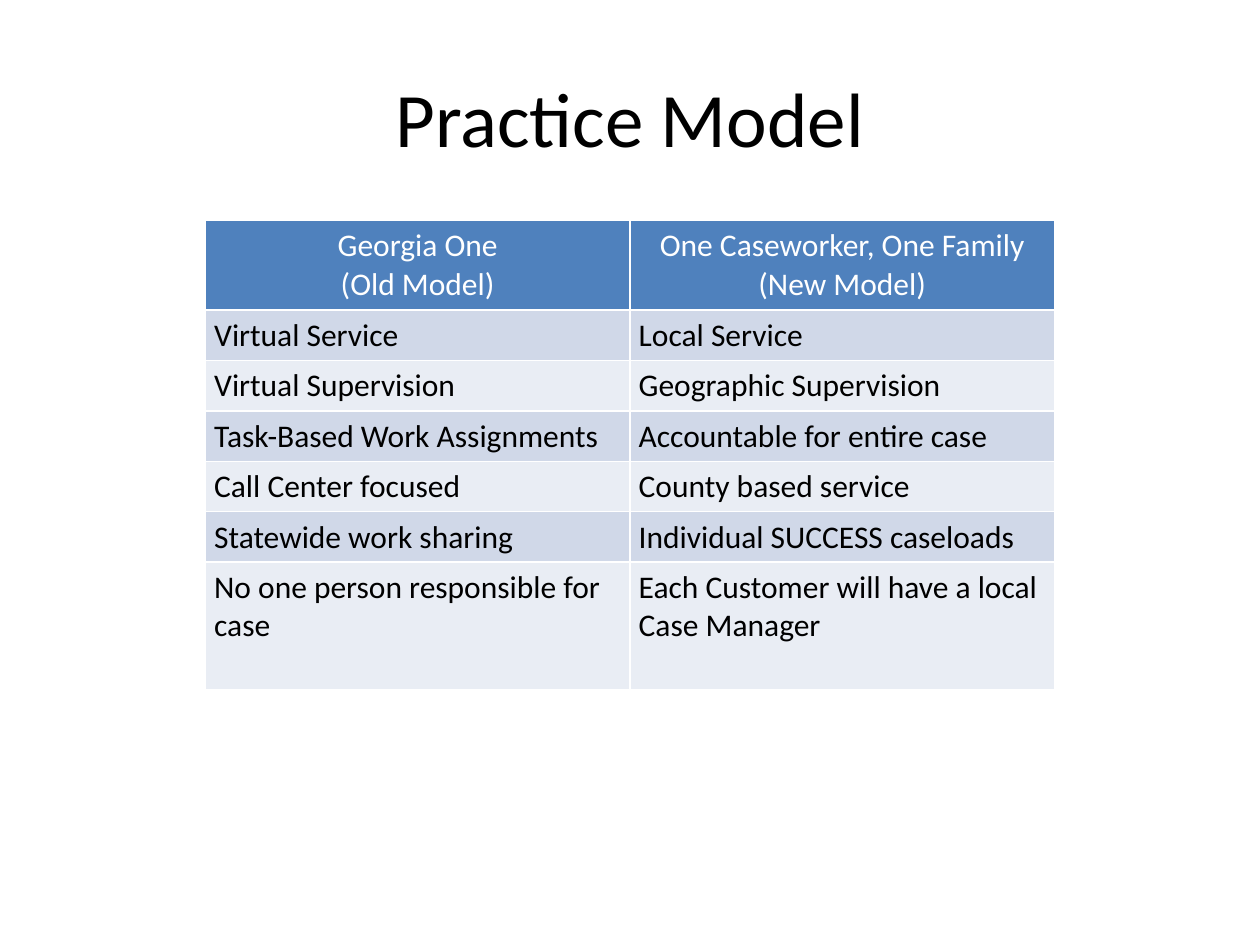
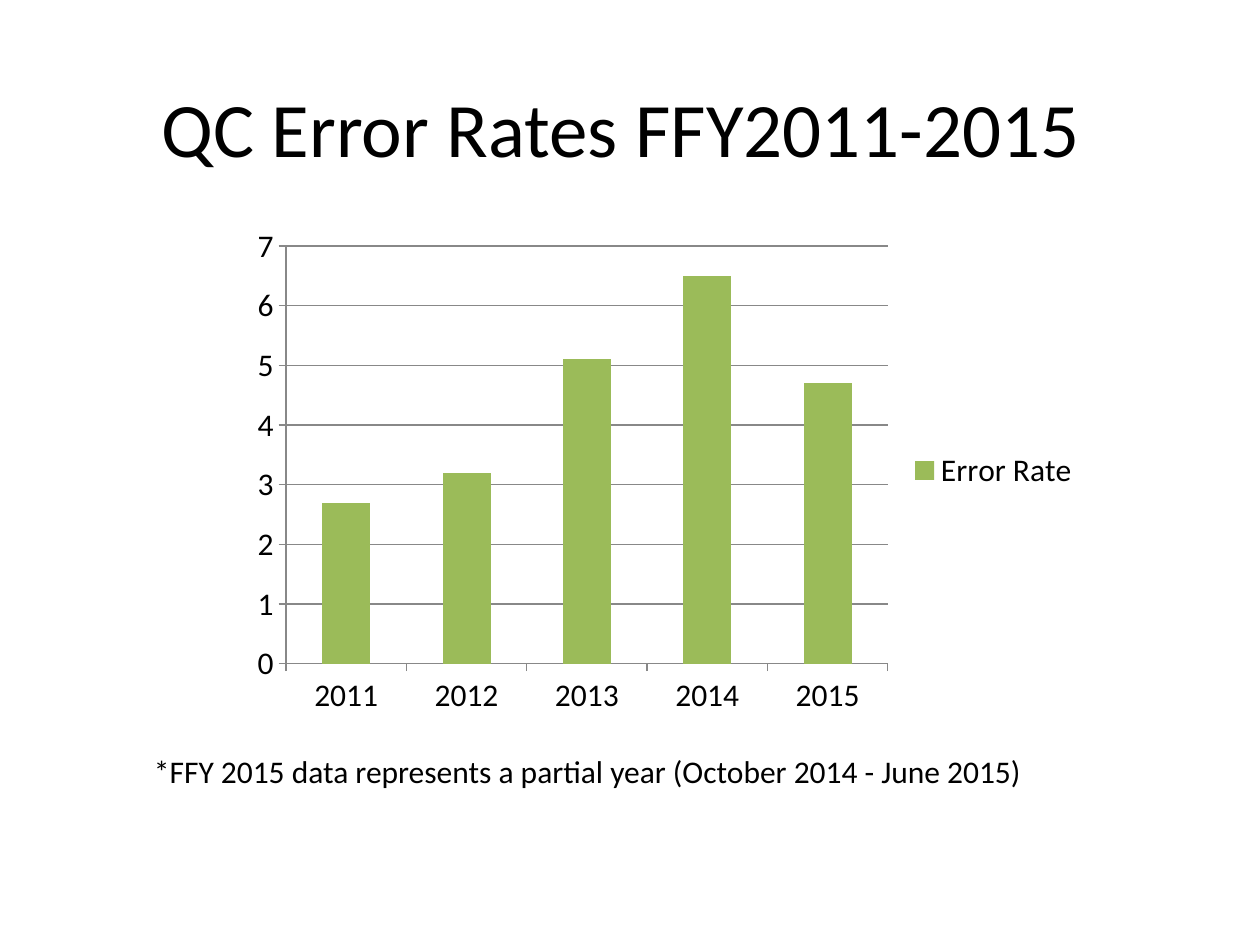
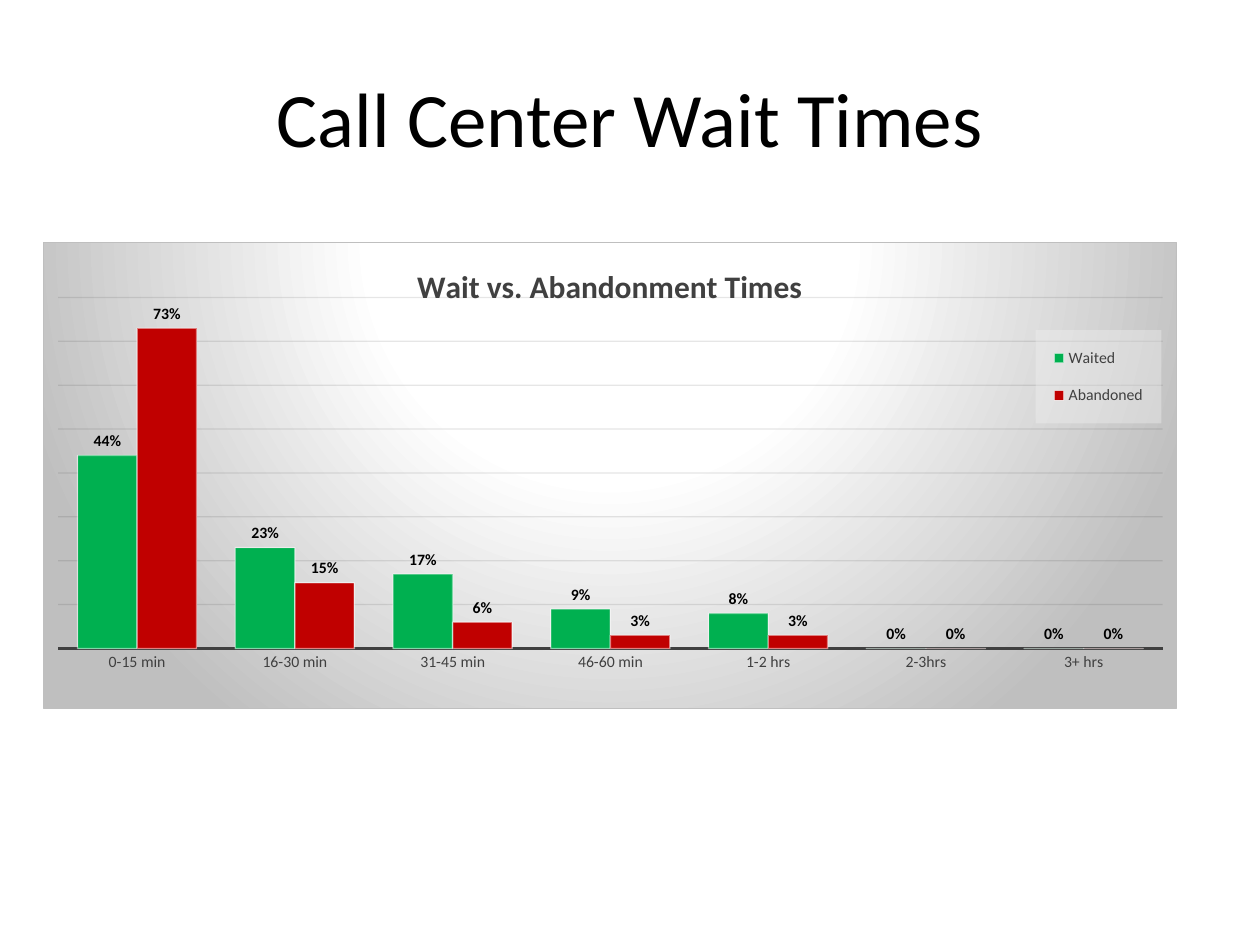
from lxml.etree import SubElement
from pptx import Presentation
from pptx.chart.data import CategoryChartData
from pptx.dml.color import RGBColor
from pptx.enum.chart import XL_CHART_TYPE, XL_LABEL_POSITION, XL_LEGEND_POSITION, XL_TICK_MARK
from pptx.enum.text import MSO_ANCHOR, PP_ALIGN
from pptx.oxml import parse_xml
from pptx.oxml.ns import nsdecls, qn
from pptx.util import Inches, Pt

FONT = "Calibri"
BLACK, WHITE = "000000", "FFFFFF"
DARK_GRAY, AXIS_GRAY, EDGE_GRAY = "404040", "888888", "BFBFBF"
HEADER_BLUE, BANDS = "4F81BD", ("D0D8E8", "E9EDF4")


def set_font(font, size, color=BLACK, bold=False):
    font.name, font.size, font.bold = FONT, Pt(size), bold
    font.color.rgb = RGBColor.from_string(color)


def write(frame, text, size=18, color=BLACK, bold=False, align=PP_ALIGN.LEFT, anchor=None):
    """Fill a text frame, one paragraph for each line of text."""
    frame.word_wrap = True
    if anchor is not None:
        frame.vertical_anchor = anchor
    for index, line in enumerate(text.split("\n")):
        para = frame.paragraphs[0] if index == 0 else frame.add_paragraph()
        para.alignment = align
        span = para.add_run()
        span.text = line
        set_font(span.font, size, color, bold)


deck = Presentation()
deck.slide_width, deck.slide_height = Inches(10), Inches(7.5)

pages = []
for title, top in [
    ("Practice Model", 0.3),
    ("QC Error Rates FFY2011-2015 ", 0.38),
    ("Call Center Wait Times", 0.3),
]:
    page = deck.slides.add_slide(deck.slide_layouts[6])
    box = page.shapes.add_textbox(Inches(0.5), Inches(top), Inches(9), Inches(1.25))
    write(box.text_frame, title, size=44, align=PP_ALIGN.CENTER, anchor=MSO_ANCHOR.MIDDLE)
    pages.append(page)
model_page, error_page, wait_page = pages

# Practice model table
models = [
    ("Georgia One\n(Old Model)", "One Caseworker, One Family\n(New Model)"),
    ("Virtual Service", "Local Service"),
    ("Virtual Supervision", "Geographic Supervision"),
    ("Task-Based Work Assignments", "Accountable for entire case"),
    ("Call Center focused", "County based service"),
    ("Statewide work sharing", "Individual SUCCESS caseloads"),
    ("No one person responsible for case", "Each Customer will have a local Case Manager"),
]
row_heights = [0.71] + [0.4] * 5 + [1.01]
table = model_page.shapes.add_table(
    len(models), 2, Inches(1.63), Inches(1.75), Inches(6.74), Inches(sum(row_heights))
).table
for row_index, (row, height) in enumerate(zip(models, row_heights)):
    table.rows[row_index].height = Inches(height)
    is_header = row_index == 0
    fill = HEADER_BLUE if is_header else BANDS[(row_index - 1) % 2]
    for column_index, text in enumerate(row):
        cell = table.cell(row_index, column_index)
        cell.fill.solid()
        cell.fill.fore_color.rgb = RGBColor.from_string(fill)
        cell.margin_left = cell.margin_right = Inches(0.07)
        write(
            cell.text_frame,
            text,
            color=WHITE if is_header else BLACK,
            align=PP_ALIGN.CENTER if is_header else PP_ALIGN.LEFT,
        )

# Error rate chart
error_data = CategoryChartData()
error_data.categories = ["2011", "2012", "2013", "2014", "2015"]
error_data.add_series("Error Rate", [2.7, 3.2, 5.1, 6.5, 4.7])
error_chart = error_page.shapes.add_chart(
    XL_CHART_TYPE.COLUMN_CLUSTERED, Inches(1.91), Inches(1.72), Inches(6.76), Inches(4.03), error_data
).chart

# Wait time chart
wait_data = CategoryChartData(number_format="0%")
wait_data.categories = [
    "0-15 min", "16-30 min", "31-45 min", "46-60 min", "1-2 hrs", "2-3hrs", "3+ hrs",
]
wait_data.add_series("Waited", [0.44, 0.23, 0.17, 0.09, 0.08, 0, 0])
wait_data.add_series("Abandoned", [0.73, 0.15, 0.06, 0.03, 0.03, 0, 0])
wait_chart = wait_page.shapes.add_chart(
    XL_CHART_TYPE.COLUMN_CLUSTERED, Inches(0.34), Inches(1.92), Inches(9), Inches(3.71), wait_data
).chart

# Format shared by both charts
for chart, size, legend_size, legend_color, legend_position, gap, top_value, step, colors in [
    (error_chart, 18, 18, BLACK, XL_LEGEND_POSITION.RIGHT, 150, 7, 1, ["9BBB59"]),
    (wait_chart, 10, 9, DARK_GRAY, XL_LEGEND_POSITION.BOTTOM, 65, 0.8, 0.1, ["00B050", "C00000"]),
]:
    set_font(chart.font, size)
    chart.has_title = False
    chart.has_legend = True
    chart.legend.position = legend_position
    chart.legend.include_in_layout = False
    set_font(chart.legend.font, legend_size, legend_color)
    set_font(chart.category_axis.tick_labels.font, legend_size, legend_color)
    chart.value_axis.minimum_scale = 0
    chart.value_axis.maximum_scale = top_value
    chart.value_axis.major_unit = step
    plot = chart.plots[0]
    plot.vary_by_categories = False
    plot.gap_width = gap
    plot.overlap = 0
    for series, color in zip(plot.series, colors):
        series.format.fill.solid()
        series.format.fill.fore_color.rgb = RGBColor.from_string(color)

# Error rate axes and note
set_font(error_chart.value_axis.tick_labels.font, 18)
for axis in (error_chart.category_axis, error_chart.value_axis):
    axis.major_tick_mark = XL_TICK_MARK.OUTSIDE
lines = [
    error_chart.category_axis.format.line,
    error_chart.value_axis.format.line,
    error_chart.value_axis.major_gridlines.format.line,
]
for line in lines:
    line.color.rgb = RGBColor.from_string(AXIS_GRAY)
    line.width = Pt(0.75)
note = error_page.shapes.add_textbox(Inches(1.08), Inches(5.92), Inches(7.17), Inches(0.4))
write(
    note.text_frame,
    "*FFY 2015 data represents a partial year (October 2014 - June 2015)",
    align=PP_ALIGN.CENTER,
)

# Wait time title, axes, labels and translucent lines
wait_chart.has_title = True
write(
    wait_chart.chart_title.text_frame,
    "Wait vs. Abandonment Times",
    color=DARK_GRAY,
    bold=True,
    align=PP_ALIGN.CENTER,
)
wait_chart.value_axis.visible = False
wait_chart.category_axis.major_tick_mark = XL_TICK_MARK.NONE
base_line = wait_chart.category_axis.format.line
base_line.color.rgb = RGBColor.from_string(DARK_GRAY)
base_line.width = Pt(1.5)

translucent = [(wait_chart.value_axis.major_gridlines.format, "0D0D0D", 10)]
for series in wait_chart.plots[0].series:
    translucent.append((series.format, WHITE, 50))
    labels = series.data_labels
    labels.show_value = True
    labels.number_format, labels.number_format_is_linked = "0%", False
    labels.position = XL_LABEL_POSITION.OUTSIDE_END
    set_font(labels.font, 9, bold=True)
for line_format, color, opacity in translucent:
    line_format.line.color.rgb = RGBColor.from_string(color)
    line_format.line.width = Pt(0.75)
    line_element = line_format.line._get_or_add_ln()
    color_element = next(line_element.iter(qn("a:srgbClr")))
    SubElement(color_element, qn("a:alpha"), val=str(opacity * 1000))

# Fixed places of the plot and the legend within the wait time chart
chart_space = wait_chart._chartSpace
plot_area = chart_space.chart.plotArea
legend = wait_chart.legend._element
for parent, index, target, place in [
    (plot_area, 0, '<c:layoutTarget val="inner"/>', (0.013, 0.118, 0.975, 0.753)),
    (legend, 1, "", (0.876, 0.188, 0.111, 0.2)),
]:
    for layout in parent.findall(qn("c:layout")):
        parent.remove(layout)
    modes = '<c:xMode val="edge"/><c:yMode val="edge"/>'
    sizes = "".join(f'<c:{name} val="{value}"/>' for name, value in zip("xywh", place))
    parent.insert(index, parse_xml(
        f'<c:layout {nsdecls("c")}><c:manualLayout>{target}{modes}{sizes}</c:manualLayout></c:layout>'
    ))

# Backgrounds of the legend and the wait time chart
legend.find(qn("c:overlay")).addnext(parse_xml(
    f'<c:spPr {nsdecls("c", "a")}><a:solidFill><a:srgbClr val="F2F2F2">'
    '<a:alpha val="39000"/></a:srgbClr></a:solidFill><a:ln><a:noFill/></a:ln></c:spPr>'
))
stops = "".join(
    f'<a:gs pos="{position * 1000}"><a:srgbClr val="{color}"/></a:gs>'
    for position, color in [(0, WHITE), (39, WHITE), (100, EDGE_GRAY)]
)
chart_space.chart.addnext(parse_xml(
    f'<c:spPr {nsdecls("c", "a")}><a:gradFill><a:gsLst>{stops}</a:gsLst>'
    '<a:path path="circle"><a:fillToRect l="50000" t="-80000" r="50000" b="180000"/></a:path>'
    f'</a:gradFill><a:ln w="{Pt(0.75)}"><a:solidFill><a:srgbClr val="{EDGE_GRAY}"/></a:solidFill>'
    '</a:ln></c:spPr>'
))

deck.save("out.pptx")
